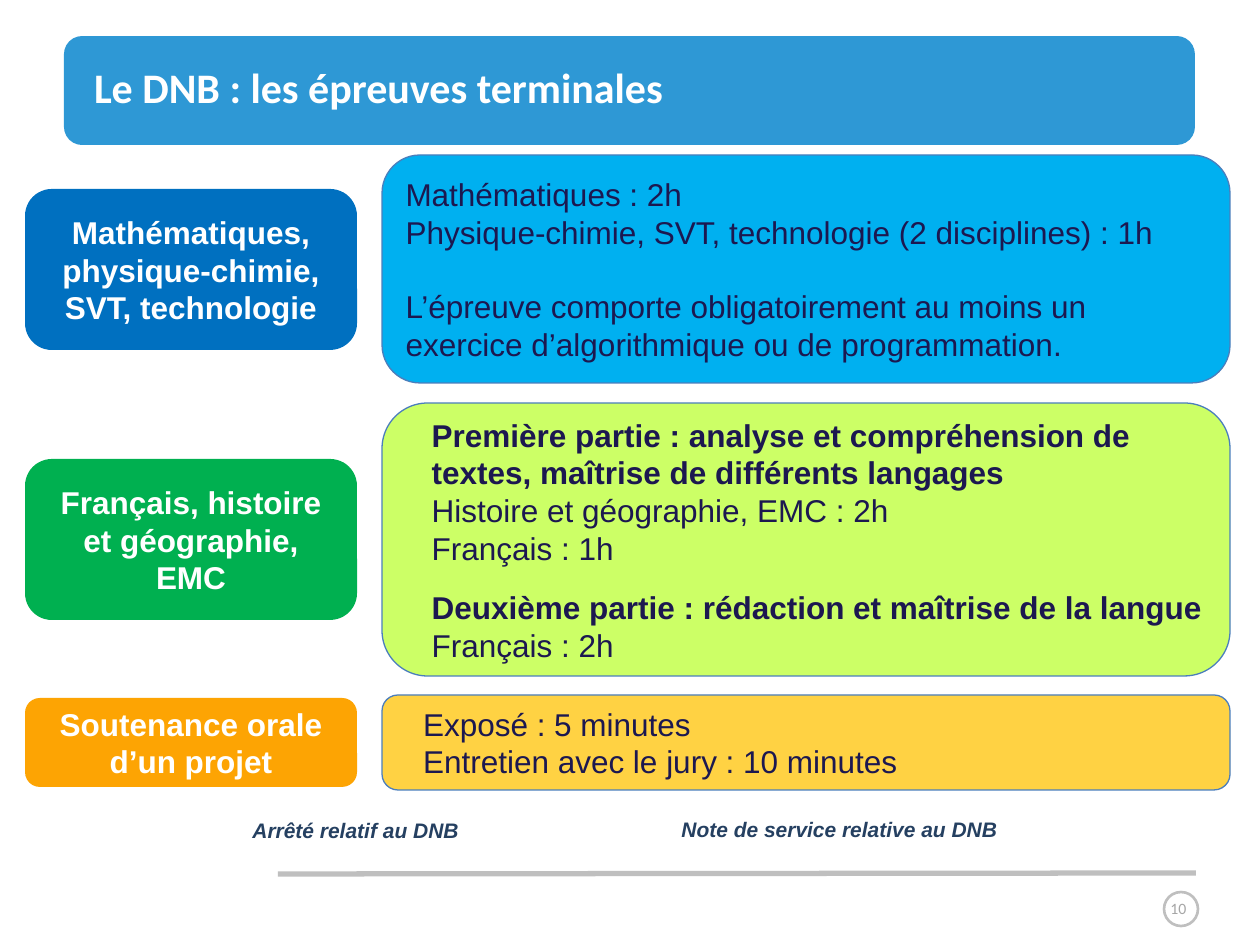
import pptx
import pptx.util
import pptx.dml.color
import pptx.enum.shapes
import pptx.enum.text
import pptx.oxml

SHAPE = pptx.enum.shapes.MSO_SHAPE
ALIGN = pptx.enum.text.PP_ALIGN
ANCHOR = pptx.enum.text.MSO_ANCHOR

TITLE = "Le DNB : les épreuves terminales"
PAGE = "10"

EXAMS = [
    dict(label="Mathématiques, physique-chimie, SVT, technologie", colors=("0070C0", "00B0F0"),
         label_y=(189, 161), detail_y=(155, 228), indent=0,
         lines=[("Mathématiques : 2h", False, 0),
                ("Physique-chimie, SVT, technologie (2 disciplines) : 1h", False, 0),
                ("L’épreuve comporte obligatoirement au moins un exercice "
                 "d’algorithmique ou de programmation.", False, 21)]),
    dict(label="Français, histoire et géographie, EMC", colors=("00B050", "CCFF66"),
         label_y=(459, 161), detail_y=(403, 273), indent=24,
         lines=[("Première partie : analyse et compréhension de textes, "
                 "maîtrise de différents langages", True, 0),
                ("Histoire et géographie, EMC : 2h", False, 0),
                ("Français : 1h", False, 0),
                ("Deuxième partie : rédaction et maîtrise de la langue", True, 12),
                ("Français : 2h", False, 0)]),
    dict(label="Soutenance orale d’un projet", colors=("FDA403", "FFD243"),
         label_y=(698, 89), detail_y=(695, 95), indent=24,
         lines=[("Exposé : 5 minutes", False, 0),
                ("Entretien avec le jury : 10 minutes", False, 0)]),
]

REFERENCES = [("Arrêté relatif au DNB", (240, 811, 233, 38)),
              ("Note de service relative au DNB", (669, 810, 344, 38))]

THEME = dict(
    band="2E98D5", outline="4B7EBC", rule="BFBFBF",
    title=dict(name="Calibri", size=24, bold=True, color="FFFFFF"),
    label=dict(name="Arial", size=18, bold=True, color="FFFFFF"),
    detail=dict(name="Arial", size=18, color="1C1850"),
    reference=dict(name="Arial", size=12, bold=True, italic=True, color="254061"),
    page=dict(name="Calibri", size=9, color="A6A6A6"),
)

LABEL_X = (25, 332)
DETAIL_X = (382, 848)


def px(n):
    return pptx.util.Emu(round(n * 914400 / 126))


def rgb(value):
    return pptx.dml.color.RGBColor.from_string(value)


def write(p, text, style):
    r = p.add_run()
    r.text = text
    for key, value in style.items():
        if key == "color":
            r.font.color.rgb = rgb(value)
        else:
            setattr(r.font, key, pptx.util.Pt(value) if key == "size" else value)


def add_shape(s, kind, box, fill=None, line=None, width=0.75):
    sp = s.shapes.add_shape(kind, *map(px, box))
    sp.shadow.inherit = False
    if fill:
        sp.fill.solid()
        sp.fill.fore_color.rgb = rgb(fill)
    else:
        sp.fill.background()
    if line:
        sp.line.color.rgb = rgb(line)
        sp.line.width = pptx.util.Pt(width)
    else:
        sp.line.fill.background()
    return sp


def add_title(s):
    title = s.shapes.title
    title.left, title.top, title.width, title.height = map(px, (94, 23, 1102, 128))
    tf = title.text_frame
    frame = dict(margin_left=0, margin_top=0, margin_right=0, margin_bottom=0,
                 vertical_anchor=ANCHOR.MIDDLE, word_wrap=True)
    for key, value in frame.items():
        setattr(tf, key, value)
    tf.paragraphs[0].alignment = ALIGN.LEFT
    write(tf.paragraphs[0], TITLE, THEME["title"])
    band = add_shape(s, SHAPE.ROUNDED_RECTANGLE, (64, 36, 1131, 109), THEME["band"])
    title._element.addprevious(band._element)


def add_exam(s, exam):
    label_fill, detail_fill = exam["colors"]
    rows = [(LABEL_X, exam["label_y"], label_fill, None, ALIGN.CENTER, 0,
             [(exam["label"], True, 0)], THEME["label"]),
            (DETAIL_X, exam["detail_y"], detail_fill, THEME["outline"], ALIGN.LEFT,
             exam["indent"], exam["lines"], THEME["detail"])]
    for (x, w), (y, h), fill, line, align, indent, lines, style in rows:
        sp = add_shape(s, SHAPE.ROUNDED_RECTANGLE, (x, y, w, h), fill, line)
        tf = sp.text_frame
        tf.word_wrap = True
        tf.vertical_anchor = ANCHOR.MIDDLE
        for i, (text, bold, before) in enumerate(lines):
            p = tf.add_paragraph() if i else tf.paragraphs[0]
            p.alignment = align
            if indent:
                p._p.get_or_add_pPr().set("marL", str(px(indent)))
            if before:
                p.space_before = pptx.util.Pt(before)
            write(p, text, {**style, "bold": bold})


def add_text(s, text, box, style, align=ALIGN.LEFT, anchor=ANCHOR.TOP):
    tf = s.shapes.add_textbox(*map(px, box)).text_frame
    tf.word_wrap = False
    tf.vertical_anchor = anchor
    tf.paragraphs[0].alignment = align
    write(tf.paragraphs[0], text, style)


def add_footer(s):
    rule = s.shapes.add_connector(pptx.enum.shapes.MSO_CONNECTOR.STRAIGHT,
                                  *map(px, (278, 874, 1196, 873)))
    rule.line.color.rgb = rgb(THEME["rule"])
    rule.line.width = pptx.util.Pt(3)
    rule._element.spPr.append(pptx.oxml.parse_xml(
        '<a:effectLst xmlns:a="http://schemas.openxmlformats.org/drawingml/2006/main"/>'))
    add_shape(s, SHAPE.OVAL, (1164, 892, 34, 34), line=THEME["rule"], width=1.5)
    add_text(s, PAGE, (1133, 891, 91, 34), THEME["page"], ALIGN.CENTER, ANCHOR.MIDDLE)


def main():
    prs = pptx.Presentation()
    prs.slide_width, prs.slide_height = px(1260), px(945)
    s = prs.slides.add_slide(prs.slide_layouts[5])
    add_title(s)
    add_footer(s)
    for exam in EXAMS:
        add_exam(s, exam)
    for text, box in REFERENCES:
        add_text(s, text, box, THEME["reference"])
    prs.save("out.pptx")


if __name__ == "__main__":
    main()
